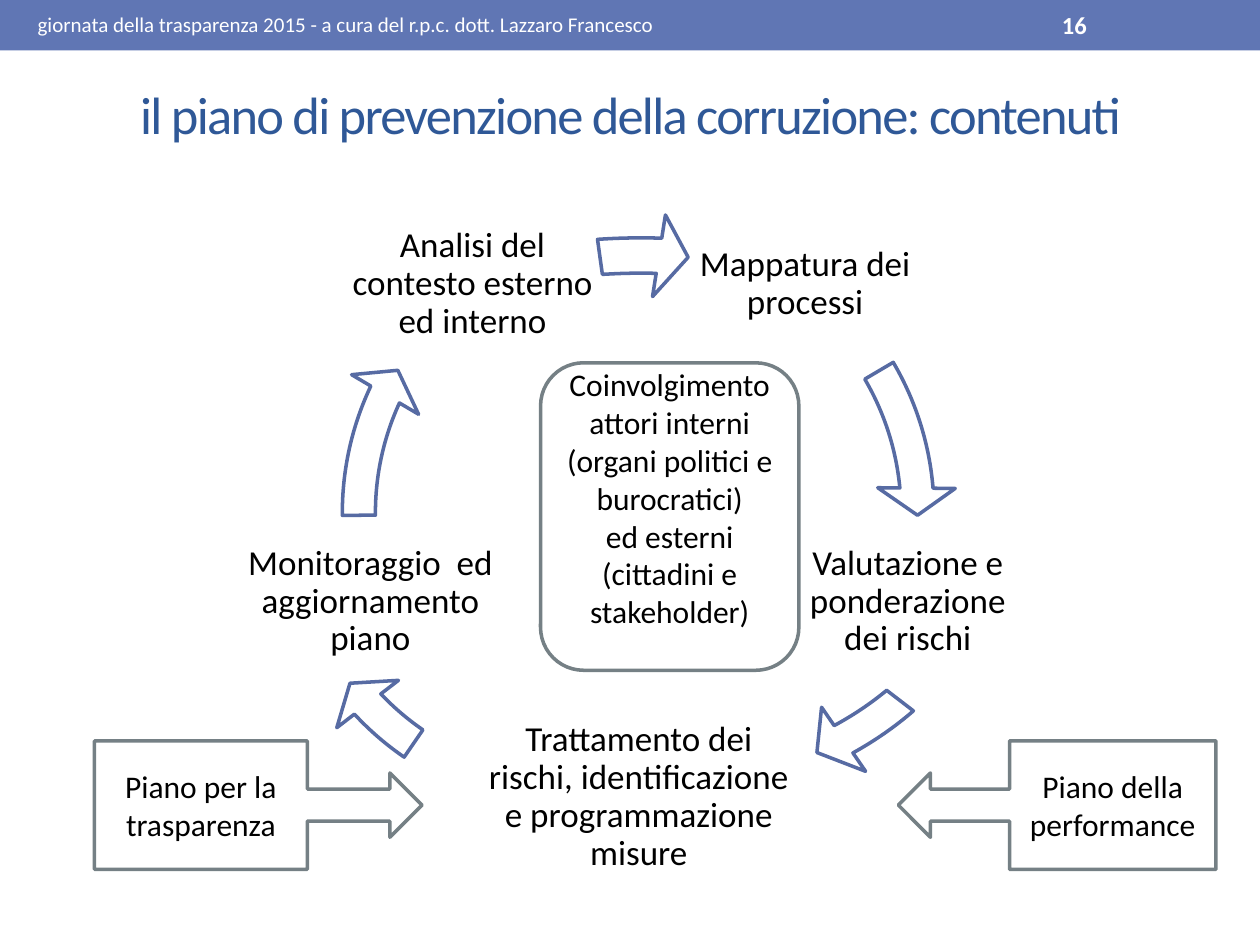
"""Build the slide on the contents of the corruption prevention plan."""
from dataclasses import dataclass
from typing import Any

from pptx import Presentation
from pptx import util as u
from pptx.dml.color import RGBColor
from pptx.enum import shapes, text

WHITE = RGBColor(0xFF, 0xFF, 0xFF)
BLACK = RGBColor(0x00, 0x00, 0x00)
BAND_BLUE = RGBColor(0x60, 0x76, 0xB4)
TITLE_BLUE = RGBColor(0x2F, 0x58, 0x97)
ARROW_BLUE = RGBColor(0x57, 0x6B, 0xA3)
BOX_GREY = RGBColor(0x75, 0x80, 0x85)

LINE_WIDTH = u.Pt(2)
STEP_INSET = u.Inches(0.03)
DEGREE = 0.6
ARROW_THICKNESS = 5.2 / 100
ARROW_HEAD_WIDTH = 6.1 / 100
ARROW_HEAD_ANGLE = 5.59

Box = tuple[float, float, float, float]


@dataclass(frozen=True)
class Step:
    """A step of the cycle."""
    label: str
    box: Box


@dataclass(frozen=True)
class CycleArrow:
    """An arc between two steps, with its angles in degrees."""
    box: Box
    start: float
    end: float


@dataclass(frozen=True)
class Panel:
    """An outlined shape with text."""
    kind: shapes.MSO_SHAPE
    box: Box
    paragraphs: tuple[str, ...]
    bottom_inset: float = 0.05


STEPS = (
    Step("Mappatura dei processi", (5.42, 1.58, 1.94, 1.35)),
    Step("Valutazione e ponderazione dei rischi", (6.35, 4.1, 1.71, 1.35)),
    Step("Trattamento dei rischi, identificazione e programmazione misure",
         (3.8, 5.65, 2.54, 1.35)),
    Step("Monitoraggio  ed aggiornamento piano", (1.78, 4.1, 2.32, 1.35)),
    Step("Analisi del contesto esterno ed interno", (2.74, 1.58, 2.02, 1.35)),
)
CYCLE_ARROWS = (
    CycleArrow((2.55, 1.54, 5.04, 5.06), 329.41, 354.92),
    CycleArrow((2.09, 1.5, 6.12, 5.06), 37.53, 49.95),
    CycleArrow((2.01, 1.54, 5.06, 5.06), 124.47, 136.89),
    CycleArrow((2.54, 1.54, 5.06, 5.06), 179.49, 205),
    CycleArrow((1.3, 1.7, 7.58, 5.38), 262.05, 273.4),
)
PANELS = (
    Panel(shapes.MSO_SHAPE.ROUNDED_RECTANGLE, (4.29, 2.88, 2.05, 2.44),
          ("Coinvolgimento attori interni (organi politici e burocratici)",
           "ed esterni (cittadini e stakeholder)"), 0.35),
    Panel(shapes.MSO_SHAPE.RIGHT_ARROW_CALLOUT, (0.75, 5.88, 2.6, 1.02),
          ("Piano per la trasparenza",)),
    Panel(shapes.MSO_SHAPE.LEFT_ARROW_CALLOUT, (7.13, 5.88, 2.52, 1.02),
          ("Piano della performance",)),
)


def inches(box: Box) -> list[u.Length]:
    """Convert a box to lengths."""
    return [u.Inches(value) for value in box]


def apply(target: Any, formats: dict[str, Any]) -> None:
    """Set each named attribute on the target."""
    for name, value in formats.items():
        setattr(target, name, value)


def write(shape: Any, paragraphs: tuple[str, ...], size: float, color: RGBColor,
          bold: bool = False, frame: dict[str, Any] | None = None,
          layout: dict[str, Any] | None = None) -> None:
    """Fill a shape with formatted paragraphs."""
    text_frame = shape.text_frame
    apply(text_frame, {"word_wrap": True, "auto_size": text.MSO_AUTO_SIZE.NONE,
                       "vertical_anchor": text.MSO_ANCHOR.MIDDLE, **(frame or {})})
    text_frame.text = "\n".join(paragraphs)
    for paragraph in text_frame.paragraphs:
        apply(paragraph, {"alignment": text.PP_ALIGN.CENTER, **(layout or {})})
        for run in paragraph.runs:
            apply(run.font, {"name": "Calibri", "size": u.Pt(size), "bold": bold})
            run.font.color.rgb = color


def add_filled(slide: Any, kind: shapes.MSO_SHAPE, box: Box, fill: RGBColor,
               line: RGBColor | None = None) -> Any:
    """Add a flat preset shape, outlined if a line colour is given."""
    shape = slide.shapes.add_shape(kind, *inches(box))
    shape.shadow.inherit = False
    shape.fill.solid()
    shape.fill.fore_color.rgb = fill
    if line is None:
        shape.line.fill.background()
    else:
        shape.line.color.rgb = line
        shape.line.width = LINE_WIDTH
    return shape


def add_header(slide: Any) -> None:
    """Add the top band with its caption and page number."""
    add_filled(slide, shapes.MSO_SHAPE.RECTANGLE, (0, 0, 10, 0.4), BAND_BLUE)
    left = {"alignment": text.PP_ALIGN.LEFT}
    caption = slide.shapes.add_textbox(*inches((0.2, 0.02, 8.05, 0.34)))
    write(caption, ("giornata della trasparenza 2015 - a cura del r.p.c. "
                    "dott. Lazzaro Francesco",), 12, WHITE, layout=left)
    number = slide.shapes.add_textbox(*inches((8.33, 0.02, 1.17, 0.36)))
    write(number, ("16",), 14, WHITE, bold=True, layout=left)


def add_title(slide: Any) -> None:
    """Place and format the title."""
    title = slide.shapes.title
    apply(title, dict(zip(("left", "top", "width", "height"),
                          inches((0.5, 0.58, 9, 0.65)))))
    write(title, ("il piano di prevenzione della corruzione: contenuti",), 30, TITLE_BLUE)
    title.text_frame.paragraphs[0].runs[0].font._element.set("spc", "-100")


def add_step(slide: Any, step: Step) -> None:
    """Add the label of a step."""
    sides = ("left", "right", "top", "bottom")
    label = slide.shapes.add_textbox(*inches(step.box))
    write(label, (step.label,), 20, BLACK,
          frame={f"margin_{side}": STEP_INSET for side in sides},
          layout={"line_spacing": 0.9})


def add_cycle_arrow(slide: Any, arrow: CycleArrow) -> None:
    """Add an arc arrow of the cycle."""
    shape = add_filled(slide, shapes.MSO_SHAPE.CIRCULAR_ARROW, arrow.box, WHITE, ARROW_BLUE)
    adjustments = (ARROW_THICKNESS, ARROW_HEAD_ANGLE * DEGREE, arrow.end * DEGREE,
                   arrow.start * DEGREE, ARROW_HEAD_WIDTH)
    for index, value in enumerate(adjustments):
        shape.adjustments[index] = value


def add_panel(slide: Any, panel: Panel) -> None:
    """Add an outlined panel."""
    shape = add_filled(slide, panel.kind, panel.box, WHITE, BOX_GREY)
    write(shape, panel.paragraphs, 18, BLACK,
          frame={"margin_bottom": u.Inches(panel.bottom_inset)})


def main() -> None:
    """Build and save the presentation."""
    presentation = Presentation()
    apply(presentation, {"slide_width": u.Inches(10), "slide_height": u.Inches(7.5)})
    slide = presentation.slides.add_slide(presentation.slide_layouts[5])
    add_header(slide)
    add_title(slide)
    for step, arrow in zip(STEPS, CYCLE_ARROWS):
        add_step(slide, step)
        add_cycle_arrow(slide, arrow)
    for panel in PANELS:
        add_panel(slide, panel)
    presentation.save("out.pptx")


if __name__ == "__main__":
    main()
